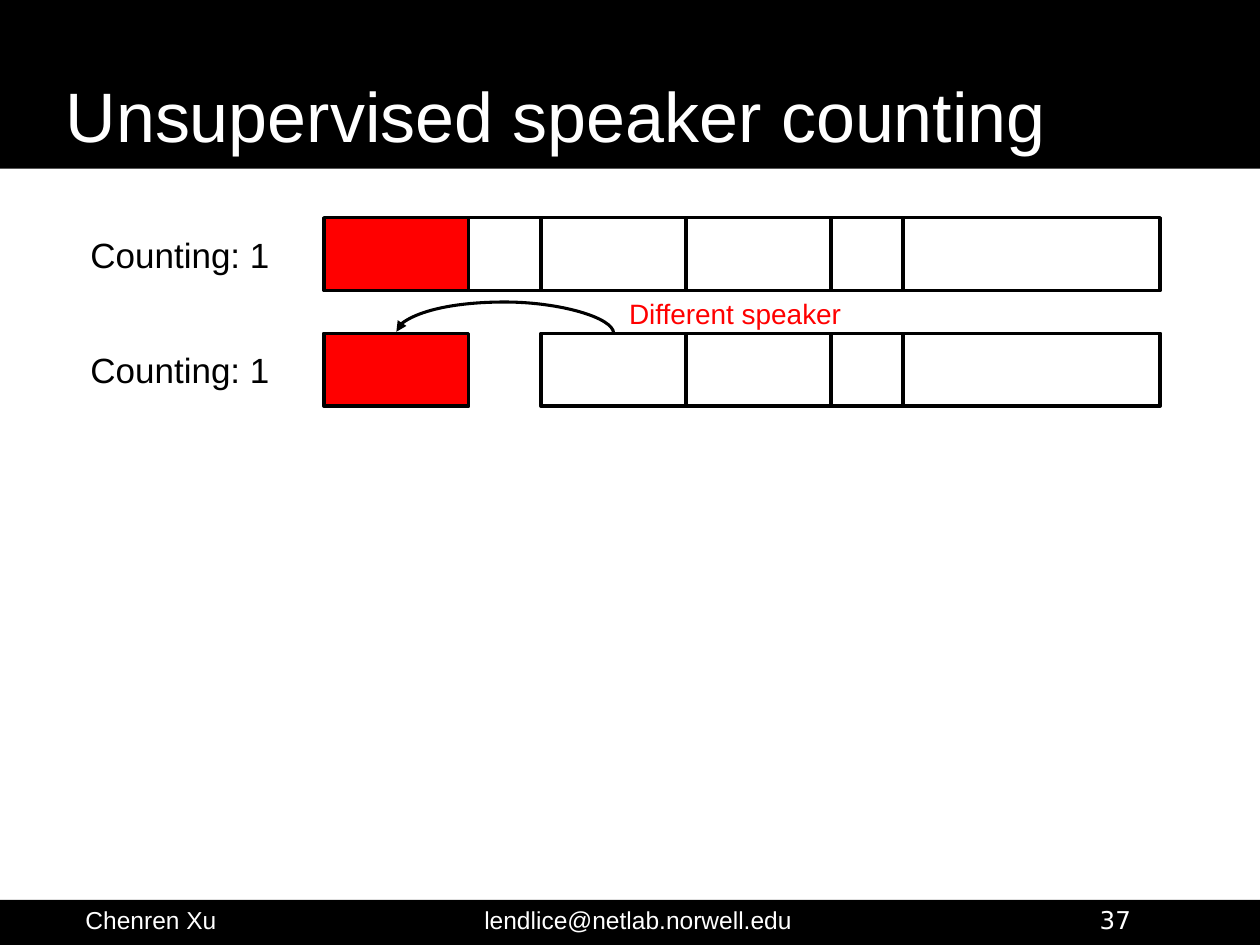
from lxml import etree
from pptx import Presentation
from pptx.dml.color import RGBColor
from pptx.enum.shapes import MSO_CONNECTOR, MSO_SHAPE
from pptx.enum.text import MSO_ANCHOR, MSO_AUTO_SIZE, PP_ALIGN
from pptx.oxml.ns import qn
from pptx.util import Cm, Pt

RECTANGLE = MSO_SHAPE.RECTANGLE
CURVE = MSO_CONNECTOR.CURVE
MIDDLE, BOTTOM = MSO_ANCHOR.MIDDLE, MSO_ANCHOR.BOTTOM
LEFT, CENTER = PP_ALIGN.LEFT, PP_ALIGN.CENTER
NO_AUTOFIT = MSO_AUTO_SIZE.NONE
BLACK, WHITE, RED = "000000", "FFFFFF", "FF0000"

SLIDE_WIDTH, SLIDE_HEIGHT = 25.4, 19.05
TITLE = "Unsupervised speaker counting"
BANDS = [(0, 3.4), (18.14, 0.91)]
FOOTERS = [
    ("Chenren Xu", 1.09, 3.91, CENTER, "Arial"),
    ("lendlice@netlab.norwell.edu", 8.56, 8.61, CENTER, "Arial"),
    ("37", 21.92, 2.44, LEFT, "DejaVu Sans"),
]
SEGMENT_WIDTHS = [2.92, 1.46, 2.92, 2.92, 1.46, 5.18]
SEGMENTS_LEFT, SEGMENT_HEIGHT = 6.53, 1.47
ROWS = [
    ("Counting: 1", 4.39, [RED, WHITE, WHITE, WHITE, WHITE, WHITE]),
    ("Counting: 1", 6.72, [RED, None, WHITE, WHITE, WHITE, WHITE]),
]
REMARK = "Different speaker"
ARC_RISE, ARC_DEPTH = 0.63, 0.03


def color(value):
    return RGBColor.from_string(value)


def write(shape, text, size, ink, align=CENTER, font="Arial", anchor=MIDDLE):
    frame = shape.text_frame
    frame.word_wrap = True
    frame.auto_size = NO_AUTOFIT
    frame.vertical_anchor = anchor
    paragraph = frame.paragraphs[0]
    paragraph.alignment = align
    run = paragraph.add_run()
    run.text = text
    run.font.size = Pt(size)
    run.font.name = font
    run.font.color.rgb = color(ink)


def add_label(shapes, box, text, size, ink, **style):
    label = shapes.add_textbox(*map(Cm, box))
    write(label, text, size, ink, **style)


def add_rectangle(shapes, box, fill, outline=None):
    rectangle = shapes.add_shape(RECTANGLE, *map(Cm, box))
    rectangle.shadow.inherit = False
    rectangle.fill.solid()
    rectangle.fill.fore_color.rgb = color(fill)
    if outline:
        rectangle.line.color.rgb = color(outline)
        rectangle.line.width = Pt(2)
    else:
        rectangle.line.fill.background()


def add_arc(shapes, start_x, end_x, base):
    span = start_x - end_x
    left = (start_x + end_x - ARC_DEPTH) / 2
    top = base - (span + ARC_DEPTH) / 2
    arc = shapes.add_connector(
        CURVE, Cm(left), Cm(top), Cm(left + ARC_DEPTH), Cm(top + span))
    arc.line.color.rgb = color(BLACK)
    arc.line.width = Pt(1.75)
    properties = arc.element.spPr
    transform = properties.find(qn("a:xfrm"))
    transform.set("rot", str(270 * 60000))
    transform.set("flipV", "1")
    adjustments = properties.find(qn("a:prstGeom")).find(qn("a:avLst"))
    bend = round(ARC_RISE / ARC_DEPTH * 100000)
    etree.SubElement(adjustments, qn("a:gd"), name="adj1", fmla=f"val {bend}")
    etree.SubElement(arc.line._get_or_add_ln(), qn("a:tailEnd"), type="triangle")
    etree.SubElement(properties, qn("a:effectLst"))


def main():
    deck = Presentation()
    deck.slide_width, deck.slide_height = Cm(SLIDE_WIDTH), Cm(SLIDE_HEIGHT)
    slide = deck.slides.add_slide(deck.slide_layouts[5])
    shapes = slide.shapes

    for top, height in BANDS:
        add_rectangle(shapes, (0, top, SLIDE_WIDTH, height), BLACK)

    title = shapes.title
    title.left, title.top, title.width, title.height = map(
        Cm, (1.07, 1.17, 23.22, 2.11))
    write(title, TITLE, 40, WHITE, align=LEFT, anchor=BOTTOM)
    shapes[-1].element.addnext(title.element)

    for text, left, width, align, font in FOOTERS:
        add_label(shapes, (left, 18.16, width, 0.76), text, 14, WHITE,
                  align=align, font=font)

    lefts = [SEGMENTS_LEFT + sum(SEGMENT_WIDTHS[:i])
             for i in range(len(SEGMENT_WIDTHS))]
    for text, top, fills in ROWS:
        add_label(shapes, (0.99, top + 0.18, 5.28, 1.11), text, 20, BLACK)
        segments = shapes.add_group_shape().shapes
        for left, width, fill in zip(lefts, SEGMENT_WIDTHS, fills):
            if fill:
                add_rectangle(segments, (left, top, width, SEGMENT_HEIGHT),
                              fill, BLACK)

    centers = [left + width / 2 for left, width in zip(lefts, SEGMENT_WIDTHS)]
    add_arc(shapes, centers[2], centers[0], ROWS[1][1])
    add_label(shapes, (12.14, 5.84, 5.36, 0.94), REMARK, 16, RED)

    deck.save("out.pptx")


if __name__ == "__main__":
    main()
